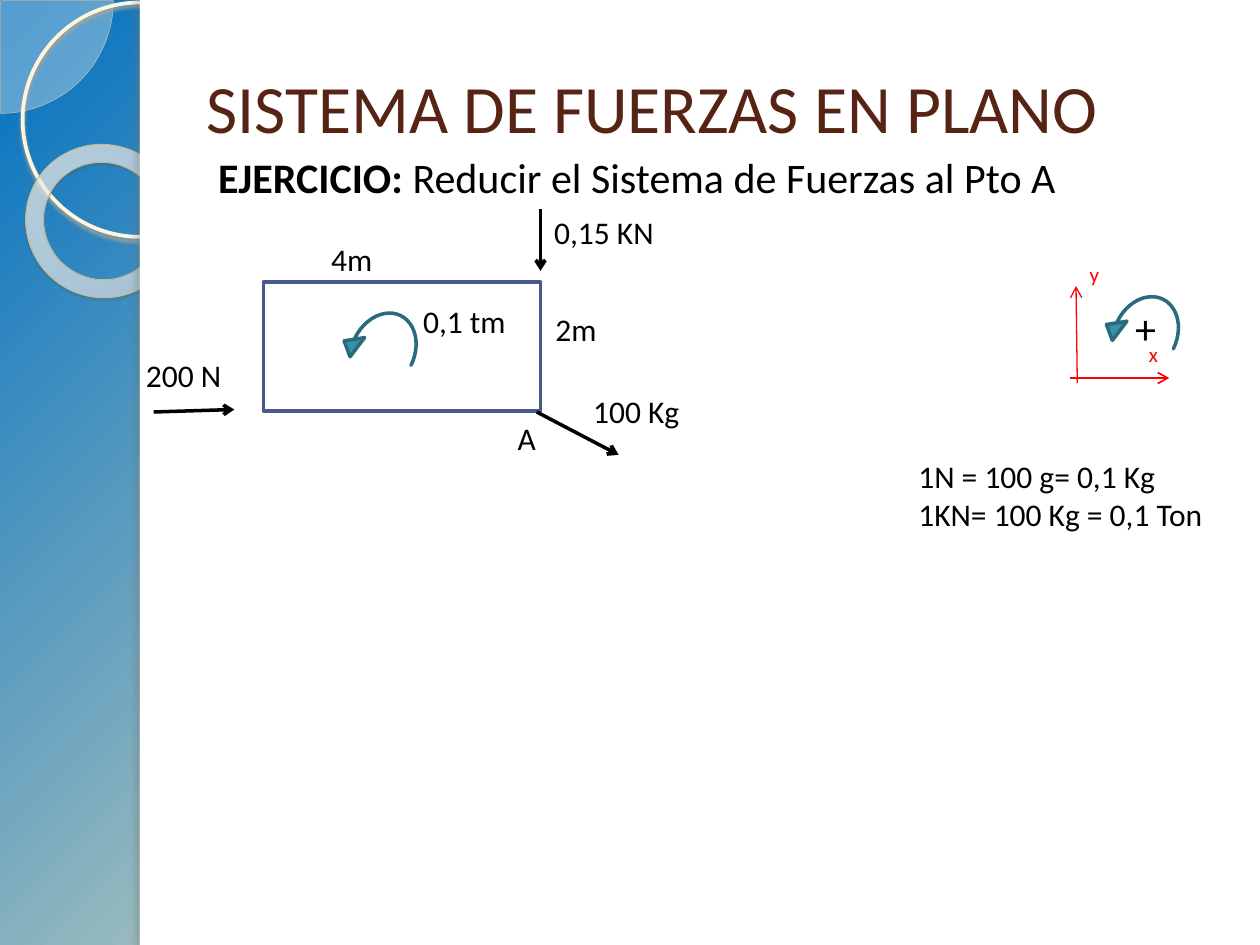
"""Build the slide of a plane force system reduced to point A."""
from pptx import Presentation
from pptx.dml.color import RGBColor
from pptx.enum.shapes import MSO_CONNECTOR, MSO_SHAPE
from pptx.enum.text import MSO_ANCHOR, MSO_AUTO_SIZE, PP_ALIGN
from pptx.oxml import parse_xml
from pptx.oxml.ns import nsdecls, qn
from pptx.oxml.xmlchemy import OxmlElement
from pptx.util import Inches, Pt

COLORS = {
    "sky": "0070C0", "cream": "FFEBBE", "sand": "C9B484",
    "pie": "FEFAF4", "pie_edge": "D3C39F",
    "ring": "FFF5DE", "ring_shadow": "B0A68F",
    "donut_in": "FFFCF6", "donut_mid": "FFFEFB", "donut_out": "F0D28E",
    "donut_edge": "C7B893", "donut_shadow": "5A5444",
    "white": "FFFFFF", "panel_shadow": "736F63",
    "title": "572314", "black": "000000", "axis": "FF0000",
    "beam": "475A8D", "moment": "3891A7", "moment_edge": "296B7C",
}


class Sketch:
    """Hold the style and the current slide, and draw each kind of element."""

    font = "Calibri"

    def __init__(self, slide, shapes=None):
        self.slide = slide
        self.shapes = slide.shapes if shapes is None else shapes

    def group(self):
        return Sketch(self.slide, self.shapes.add_group_shape().shapes)

    def rgb(self, color):
        return RGBColor.from_string(COLORS[color])

    def child(self, parent, tag, **attributes):
        element = OxmlElement(tag)
        for key, value in attributes.items():
            element.set(key, str(value))
        parent.append(element)
        return element

    def gradient(self, fill, owner, stops, focus):
        fill.gradient()
        flat = next(owner.iter(qn("a:gradFill")))
        radial = parse_xml(f'<a:gradFill {nsdecls("a")} rotWithShape="1"/>')
        stop_list = self.child(radial, "a:gsLst")
        for position, color, opacity in stops:
            stop = self.child(stop_list, "a:gs", pos=position * 1000)
            tint = self.child(stop, "a:srgbClr", val=COLORS[color])
            if opacity < 100:
                self.child(tint, "a:alpha", val=opacity * 1000)
        circle = self.child(radial, "a:path", path="circle")
        sides = {side: value * 1000 for side, value in zip("ltrb", focus)}
        self.child(circle, "a:fillToRect", **sides)
        flat.getparent().replace(flat, radial)

    def background(self, stops, focus):
        backdrop = self.slide.background
        self.gradient(backdrop.fill, self.slide.element, stops, focus)

    def shape(self, kind, box, fill=None, opacity=100, edge=None, width=0,
              adjustments=(), rotation=0, flip=False, shadow=None):
        figure = self.shapes.add_shape(kind, *map(Inches, box))
        figure.shadow.inherit = False
        figure.rotation = rotation
        for index, value in enumerate(adjustments):
            figure.adjustments[index] = value
        properties = figure.element.spPr
        if fill:
            figure.fill.solid()
            figure.fill.fore_color.rgb = self.rgb(fill)
            if opacity < 100:
                tint = next(properties.iter(qn("a:srgbClr")))
                self.child(tint, "a:alpha", val=opacity * 1000)
        else:
            figure.fill.background()
        if edge:
            figure.line.color.rgb = self.rgb(edge)
            figure.line.width = Pt(width)
        else:
            figure.line.fill.background()
        if flip:
            properties.find(qn("a:xfrm")).set("flipH", "1")
        if shadow:
            color, strength, blur, distance, angle = shadow
            outer = self.child(
                properties.find(qn("a:effectLst")), "a:outerShdw",
                blurRad=Pt(blur), dist=Pt(distance), dir=angle * 60000,
                algn="tl", rotWithShape=0)
            tint = self.child(outer, "a:srgbClr", val=COLORS[color])
            self.child(tint, "a:alpha", val=strength * 1000)
        return figure

    def moment(self, left, top):
        self.shape(MSO_SHAPE.CIRCULAR_ARROW, (left, top, 0.66, 0.8), "moment",
                   edge="moment_edge", width=2, rotation=26.1, flip=True,
                   adjustments=(0, 19.332, 1.763, 108, 0.125))

    def arrow(self, start, end, color="black", width=2):
        vector = self.shapes.add_connector(
            MSO_CONNECTOR.STRAIGHT, *map(Inches, start + end))
        vector.line.color.rgb = self.rgb(color)
        vector.line.width = Pt(width)
        properties = vector.element.spPr
        self.child(properties.find(qn("a:ln")), "a:tailEnd", type="arrow")
        self.child(properties, "a:effectLst")

    def add_words(self, paragraph, text, size, color="black", bold=False):
        run = paragraph.add_run()
        run.text = text
        formats = {"name": self.font, "size": Pt(size), "bold": bold}
        for key, value in formats.items():
            setattr(run.font, key, value)
        run.font.color.rgb = self.rgb(color)

    def label(self, lines, box, size=18, color="black"):
        frame = self.shapes.add_textbox(*map(Inches, box)).text_frame
        frame.word_wrap = True
        for index, line in enumerate(lines.split("\n")):
            paragraph = frame.add_paragraph() if index else frame.paragraphs[0]
            self.add_words(paragraph, line, size, color)

    def placeholder(self, index, box, anchor):
        holder = self.slide.placeholders[index]
        self.slide.shapes.element.append(holder.element)
        for key, value in zip(("left", "top", "width", "height"), box):
            setattr(holder, key, Inches(value))
        frame = holder.text_frame
        formats = {"auto_size": MSO_AUTO_SIZE.NONE, "word_wrap": True,
                   "vertical_anchor": anchor}
        for key, value in formats.items():
            setattr(frame, key, value)
        paragraph = frame.paragraphs[0]
        paragraph.alignment = PP_ALIGN.LEFT
        return paragraph

    def title(self, text, box):
        self.add_words(self.placeholder(0, box, MSO_ANCHOR.MIDDLE), text, 38.7, "title")

    def statement(self, heading, text, box):
        paragraph = self.placeholder(1, box, MSO_ANCHOR.TOP)
        paragraph.space_before = Pt(6)
        properties = paragraph._p.get_or_add_pPr()
        properties.set("marL", str(Inches(0.09)))
        properties.set("indent", "0")
        self.child(properties, "a:buNone")
        self.add_words(paragraph, heading, 24, bold=True)
        self.add_words(paragraph, text, 24)


def decorate(sketch):
    sketch.background([(0, "sky", 100), (82, "cream", 100), (100, "sand", 100)],
                      (-24, -20, 124, 120))
    sketch.shape(MSO_SHAPE.PIE, (-0.89, -0.89, 1.79, 1.79), "pie", 33,
                 "pie_edge", 0.25, (0, 54.021))
    sketch.shape(MSO_SHAPE.OVAL, (0.18, 0.02, 1.86, 1.86), edge="ring",
                 width=2.15, shadow=("ring_shadow", 85, 2, 2, 90))
    donut = sketch.shape(MSO_SHAPE.DONUT, (0.2, 1.15, 1.23, 1.21),
                         edge="donut_edge", width=0.58, adjustments=(0.118,),
                         rotation=38.6, shadow=("donut_shadow", 35, 1, 1.2, 75))
    sketch.gradient(
        donut.fill, donut.element,
        [(0, "donut_in", 70), (70, "donut_mid", 55), (100, "donut_out", 60)],
        (-408, -50, 508, 150))
    sketch.shape(MSO_SHAPE.RECTANGLE, (1.11, 0, 8.89, 7.5), "white")
    sketch.shape(MSO_SHAPE.RECTANGLE, (1.11, 0, 0.08, 7.5), "white",
                 shadow=("panel_shadow", 25, 3, 3, 180))


def main():
    deck = Presentation()
    deck.slide_width, deck.slide_height = Inches(10), Inches(7.5)
    sketch = Sketch(deck.slides.add_slide(deck.slide_layouts[1]))
    decorate(sketch)
    sketch.title("SISTEMA DE FUERZAS EN PLANO", (1.54, 0.3, 8.23, 1.09))
    sketch.statement("EJERCICIO: ", "Reducir el Sistema de Fuerzas al Pto A",
                     (1.54, 1.15, 8.2, 0.55))
    sketch.shape(MSO_SHAPE.RECTANGLE, (2.09, 2.24, 2.2, 1.02), "white",
                 edge="beam", width=2)

    axes = sketch.group()
    axes.label("y", (8.55, 2.03, 0.56, 0.3), 12, "axis")
    axes.arrow((8.55, 3.04), (8.54, 2.27), "axis", 0.75)
    axes.arrow((8.49, 3), (9.28, 3), "axis", 1)
    axes.label("x", (9.02, 2.66, 0.56, 0.3), 12, "axis")

    for start, end in (((1.22, 3.27), (1.86, 3.25)),
                       ((4.29, 1.66), (4.29, 2.15)),
                       ((4.26, 3.27), (4.91, 3.61))):
        sketch.arrow(start, end)
    for left, top in ((8.76, 2.26), (2.71, 2.39)):
        sketch.moment(left, top)
    sketch.label("+", (8.91, 2.35, 0.51, 0.5), 24)
    for text, left, top, width in (
            ("2m", 4.31, 2.41, 0.8), ("4m", 2.53, 1.86, 0.8),
            ("200 N", 1.06, 2.78, 1.04), ("0,15 KN", 4.3, 1.64, 1.41),
            ("100 Kg", 4.61, 3.06, 1.41), ("0,1 tm", 3.26, 2.35, 1.04),
            ("A", 4.01, 3.28, 0.4)):
        sketch.label(text, (left, top, width, 0.4))
    sketch.label("1N = 100 g= 0,1 Kg\n1KN= 100 Kg = 0,1 Ton", (7.19, 3.58, 2.72, 0.71))
    deck.save("out.pptx")


if __name__ == "__main__":
    main()
